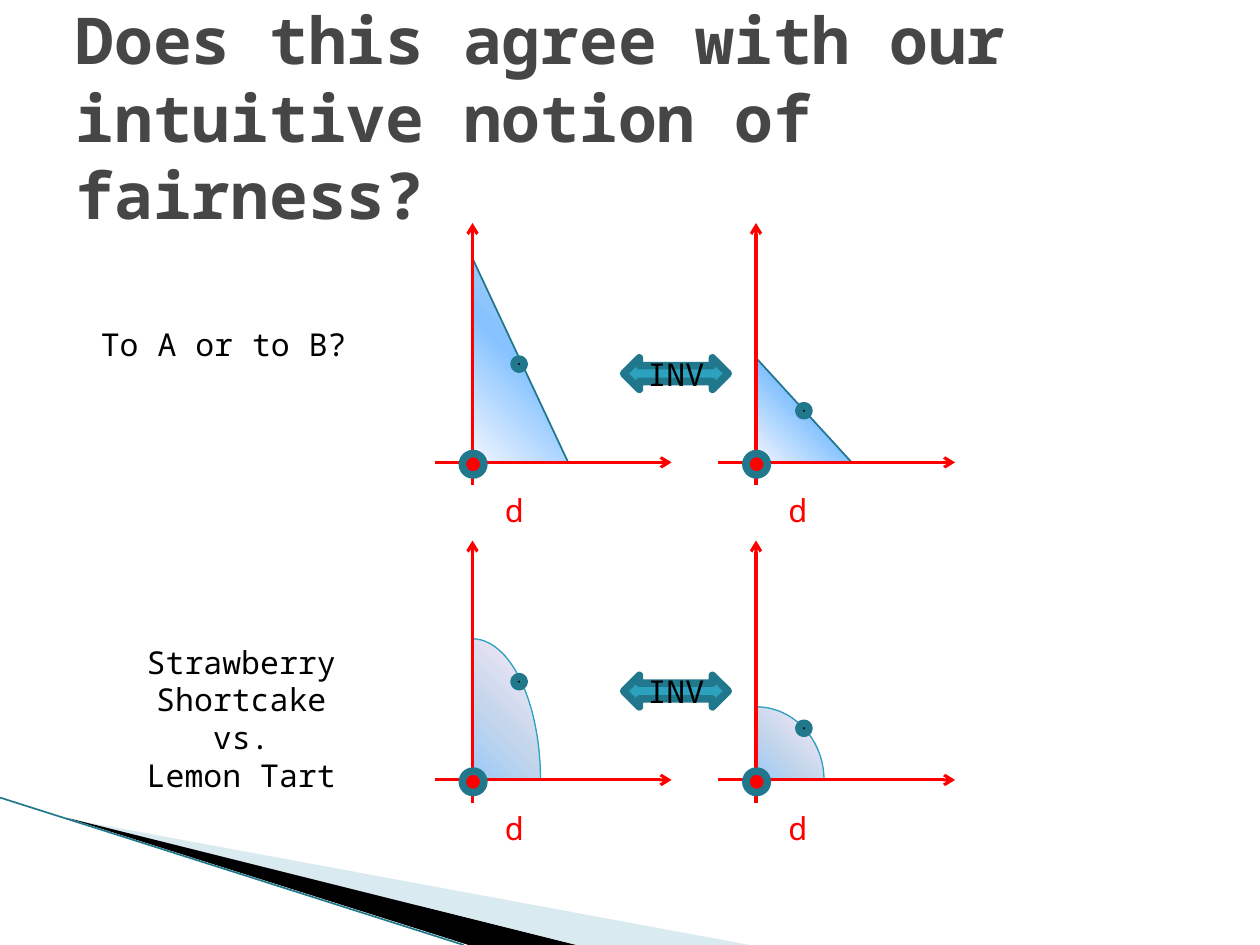
from lxml import etree
from pptx import Presentation
from pptx import util as u
from pptx.dml.color import RGBColor
from pptx.enum import shapes, text
from pptx.oxml.ns import qn

PX = 9144  # 100 px to the inch
FONT = "Noto Sans Mono"
COLORS = {
    "title": "464646", "black": "000000", "axis": "FF0000", "teal": "2DA2BF",
    "edge": "21788D", "pale": "D9EAF1",
}
CAKE = [(0, "5E9EFF"), (40, "85C2FF"), (70, "C4D6EB"), (100, "FFEBFA")]
WEDGE = [(0, "F2F6FF"), (50, "85C2FF"), (100, "C4D6EB")]

TITLE = "Does this agree with our intuitive notion of fairness?"
LABELS = [
    ("To A or to B?", (70, 253, 215, 40)),
    ("Strawberry Shortcake\vvs.\vLemon Tart", (50, 505, 283, 101)),
]
CORNER = [
    ("pale", [(55, 650), (595, 750), (456, 750)]),
    ("black", [(53, 649), (457, 750), (372, 750)]),
]
ORIGIN = (375, 367)
COLUMN_STEP, ROW_STEP = 225, 252
# Per column: triangle height, arc radius, marked point relative to the origin
COLUMNS = [
    {"height": 162, "radius": 112, "point": (37, -78)},
    {"height": 83, "radius": 58, "point": (38, -41)},
]
TRIANGLE_WIDTH, ARC_WIDTH = 76, 54

deck = Presentation()
deck.slide_width, deck.slide_height = 1000 * PX, 750 * PX
page = deck.slides.add_slide(deck.slide_layouts[5])


def px(*values):
    return [u.Emu(value * PX) for value in values]


def rgb(name):
    return RGBColor.from_string(COLORS[name])


def write(shape, content, size=18, color="black", bold=False,
          align=text.PP_ALIGN.LEFT, **frame_format):
    frame = shape.text_frame
    for key, value in frame_format.items():
        setattr(frame, key, value)
    para = frame.paragraphs[0]
    para.text = content
    para.alignment = align
    font = {"name": FONT, "size": u.Pt(size), "bold": bold}
    for key, value in font.items():
        setattr(para.font, key, value)
    para.font.color.rgb = rgb(color)


def outline(shape, color, width):
    shape.line.color.rgb = rgb(color)
    shape.line.width = u.Pt(width)


def gradient(shape, stops):
    """Fill from the bottom left to the top right."""
    shape.fill.gradient()
    shape.fill.gradient_angle = 45
    stop_list = shape._element.spPr.find(qn("a:gradFill")).find(qn("a:gsLst"))
    for old in list(stop_list):
        stop_list.remove(old)
    for position, color in stops:
        stop = etree.SubElement(stop_list, qn("a:gs"), pos=str(position * 1000))
        etree.SubElement(stop, qn("a:srgbClr"), val=color)


def preset(kind, box, fill=None, line="edge", width=4.33):
    shape = page.shapes.add_shape(kind, *px(*box))
    shape.shadow.inherit = False
    if fill:
        shape.fill.solid()
        shape.fill.fore_color.rgb = rgb(fill)
    outline(shape, line, width)
    return shape


def polygon(points):
    builder = page.shapes.build_freeform(*points[0], scale=PX)
    builder.add_line_segments(points[1:], close=True)
    shape = builder.convert_to_shape()
    shape.shadow.inherit = False
    return shape


def straight(start, end, color, width, arrow=False):
    line = page.shapes.add_connector(
        shapes.MSO_CONNECTOR.STRAIGHT, *px(*start, *end))
    outline(line, color, width)
    if arrow:
        etree.SubElement(line.line._get_or_add_ln(), qn("a:tailEnd"), type="arrow")
    etree.SubElement(line._element.spPr, qn("a:effectLst"))


def dot(x, y, size, fill):
    box = (x - size // 2, y - size // 2, size, size)
    preset(shapes.MSO_SHAPE.OVAL, box, fill)


def label(content, box, **style):
    write(page.shapes.add_textbox(*px(*box)), content, word_wrap=True, **style)


def panel(x, y, column, curved):
    if curved:
        radius = column["radius"]
        box = (x - ARC_WIDTH, y - radius, 2 * ARC_WIDTH, 2 * radius)
        area = preset(shapes.MSO_SHAPE.ARC, box, line="teal", width=0.75)
        gradient(area, CAKE)
    else:
        area = polygon([(x, y), (x, y - column["height"]), (x + TRIANGLE_WIDTH, y)])
        outline(area, "edge", 1)
        gradient(area, WEDGE)
    straight((x, y + 18), (x, y - 190), "axis", 1.75, arrow=True)
    straight((x - 30, y), (x + 158, y), "axis", 1.75, arrow=True)
    dx, dy = column["point"]
    dot(x + dx, y + dy, 8, "black")
    dot(x, y + 1, 17, "axis")
    label("d", (x + 16, y + 18, 83, 40), color="axis")


for color, points in CORNER:
    shape = polygon(points)
    shape.fill.solid()
    shape.fill.fore_color.rgb = rgb(color)
    shape.line.fill.background()
straight((0, 633), (368, 750), "edge", 0.95)

title = page.shapes.title
title.left, title.top, title.width, title.height = px(50, 30, 900, 125)
write(title, TITLE, size=36.9, color="title", bold=True, word_wrap=True,
      auto_size=text.MSO_AUTO_SIZE.NONE, vertical_anchor=text.MSO_ANCHOR.MIDDLE)

for row, (content, box) in enumerate(LABELS):
    y = ORIGIN[1] + row * ROW_STEP
    for index, column in enumerate(COLUMNS):
        panel(ORIGIN[0] + index * COLUMN_STEP, y, column, curved=row == 1)
    swap = preset(shapes.MSO_SHAPE.LEFT_RIGHT_ARROW, (495, y - 83, 83, 25), "teal")
    write(swap, "INV", align=text.PP_ALIGN.CENTER, word_wrap=False,
          vertical_anchor=text.MSO_ANCHOR.MIDDLE)
    label(content, box, align=text.PP_ALIGN.CENTER)

deck.save("out.pptx")
